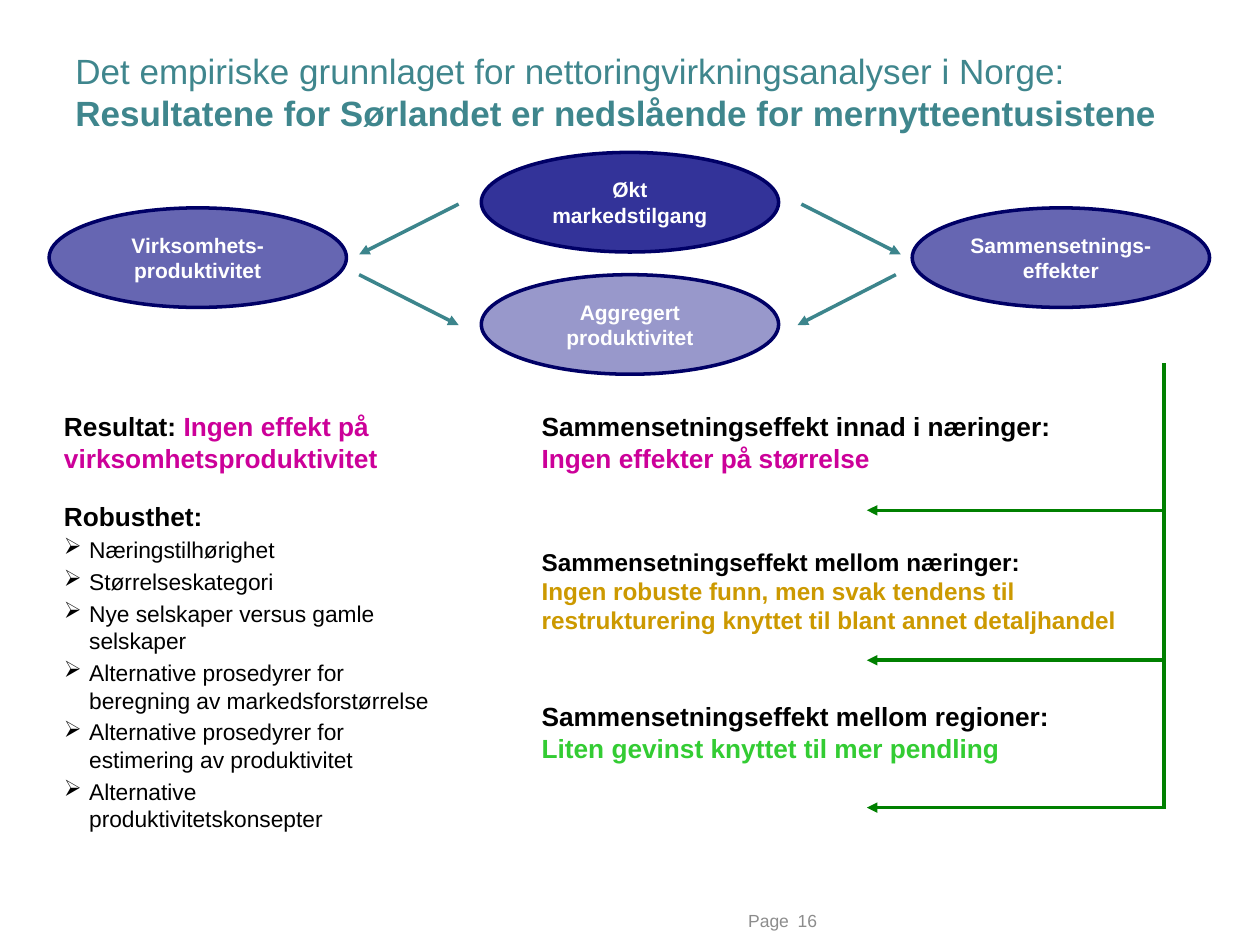
from typing import NamedTuple

from lxml.etree import SubElement
from pptx import Presentation
from pptx.dml.color import RGBColor
from pptx.enum.shapes import MSO_CONNECTOR, MSO_SHAPE
from pptx.enum.text import MSO_ANCHOR as Anchor, PP_ALIGN as Align
from pptx.oxml.ns import qn
from pptx.util import Inches, Pt

TITLE_TEAL = RGBColor(0x3F, 0x86, 0x8D)
ARROW_TEAL = RGBColor(0x3C, 0x85, 0x8C)
INDIGO = RGBColor(0x33, 0x33, 0x99)
NAVY = RGBColor(0x00, 0x00, 0x66)
BRANCH_GREEN = RGBColor(0x00, 0x80, 0x00)
MAGENTA = RGBColor(0xCC, 0x00, 0x99)
OCHRE = RGBColor(0xCC, 0x99, 0x00)
LIME = RGBColor(0x33, 0xCC, 0x33)
GREY = RGBColor(0x8C, 0x8C, 0x8C)
BLACK = RGBColor(0x00, 0x00, 0x00)
WHITE = RGBColor(0xFF, 0xFF, 0xFF)

OVAL_WIDTH, OVAL_HEIGHT = 2.36, 0.79
TRUNK_X, TRUNK_TOP, BRANCH_END_X = 9.24, 2.88, 6.88
FINDING_X = 4.2


class Concept(NamedTuple):
    label: str
    left: float
    top: float
    opacity: int


class Arrow(NamedTuple):
    x1: float
    y1: float
    x2: float
    y2: float


class Finding(NamedTuple):
    heading: str
    result: str
    color: RGBColor
    size: float
    top: float
    width: float
    height: float
    branch_y: float


CONCEPTS = [
    Concept("Økt markedstilgang", 3.82, 1.21, 100),
    Concept("Virksomhets-produktivitet", 0.39, 1.65, 75),
    Concept("Sammensetnings-effekter", 7.24, 1.65, 75),
    Concept("Aggregert produktivitet", 3.82, 2.18, 50),
]
ARROWS = [
    Arrow(3.64, 1.62, 2.85, 2.02),
    Arrow(6.36, 1.62, 7.15, 2.02),
    Arrow(7.11, 2.18, 6.33, 2.58),
    Arrow(2.85, 2.18, 3.64, 2.58),
]
FINDINGS = [
    Finding("Sammensetningseffekt innad i næringer:", "Ingen effekter på størrelse",
            MAGENTA, 15, 3.21, 4.25, 0.64, 4.05),
    Finding("Sammensetningseffekt mellom næringer:",
            "Ingen robuste funn, men svak tendens til restrukturering "
            "knyttet til blant annet detaljhandel",
            OCHRE, 13.9, 4.29, 4.88, 0.78, 5.24),
    Finding("Sammensetningseffekt mellom regioner:", "Liten gevinst knyttet til mer pendling",
            LIME, 15, 5.51, 4.25, 0.64, 6.41),
]
ROBUSTNESS_CHECKS = [
    "Næringstilhørighet",
    "Størrelseskategori",
    "Nye selskaper versus gamle selskaper",
    "Alternative prosedyrer for beregning av markedsforstørrelse",
    "Alternative prosedyrer for estimering av produktivitet",
    "Alternative produktivitetskonsepter",
]


def add_run(paragraph, text: str, size: float, color: RGBColor, bold: bool = False) -> None:
    run = paragraph.add_run()
    run.text = text
    run.font.name = "Arial"
    run.font.size = Pt(size)
    run.font.bold = bold
    run.font.color.rgb = color


def add_frame(slide, left: float, top: float, width: float, height: float,
              anchor: Anchor = Anchor.TOP):
    """Add a wrapping text box and return its text frame."""
    frame = slide.shapes.add_textbox(
        Inches(left), Inches(top), Inches(width), Inches(height)).text_frame
    frame.word_wrap = True
    frame.vertical_anchor = anchor
    return frame


def draw_line(slide, line: Arrow, color: RGBColor, arrowhead: bool = True) -> None:
    connector = slide.shapes.add_connector(
        MSO_CONNECTOR.STRAIGHT, Inches(line.x1), Inches(line.y1),
        Inches(line.x2), Inches(line.y2))
    connector.line.color.rgb = color
    connector.line.width = Pt(2)
    if arrowhead:
        SubElement(connector.line._get_or_add_ln(), qn("a:tailEnd"), type="triangle")
    SubElement(connector._element.spPr, qn("a:effectLst"))


def draw_concept(slide, concept: Concept) -> None:
    oval = slide.shapes.add_shape(
        MSO_SHAPE.OVAL, Inches(concept.left), Inches(concept.top),
        Inches(OVAL_WIDTH), Inches(OVAL_HEIGHT))
    oval.shadow.inherit = False
    oval.fill.solid()
    oval.fill.fore_color.rgb = INDIGO
    if concept.opacity < 100:
        fill_color = oval._element.spPr.find(qn("a:solidFill"))[0]
        SubElement(fill_color, qn("a:alpha"), val=str(concept.opacity * 1000))
    oval.line.color.rgb = NAVY
    oval.line.width = Pt(2)
    oval.text_frame.word_wrap = True
    oval.text_frame.vertical_anchor = Anchor.MIDDLE
    label = oval.text_frame.paragraphs[0]
    label.alignment = Align.CENTER
    add_run(label, concept.label, 12, WHITE, bold=True)


def draw_finding(slide, finding: Finding) -> None:
    frame = add_frame(slide, FINDING_X, finding.top, finding.width, finding.height)
    paragraph = frame.paragraphs[0]
    add_run(paragraph, finding.heading, finding.size, BLACK, bold=True)
    paragraph.add_line_break()
    add_run(paragraph, finding.result, finding.size, finding.color, bold=True)
    draw_line(slide, Arrow(TRUNK_X, finding.branch_y, BRANCH_END_X, finding.branch_y),
              BRANCH_GREEN)


def draw_title(slide) -> None:
    title = add_frame(slide, 0.5, 0.3, 9, 0.85, Anchor.MIDDLE).paragraphs[0]
    add_run(title, "Det empiriske grunnlaget for nettoringvirkningsanalyser i Norge:",
            20, TITLE_TEAL)
    title.add_line_break()
    add_run(title, "Resultatene for Sørlandet er nedslående for mernytteentusistene",
            20, TITLE_TEAL, bold=True)


def draw_firm_results(slide) -> None:
    frame = add_frame(slide, 0.41, 3.21, 3.14, 3.6)
    result = frame.paragraphs[0]
    add_run(result, "Resultat: ", 15, BLACK, bold=True)
    add_run(result, "Ingen effekt på virksomhetsproduktivitet", 15, MAGENTA, bold=True)
    robustness = frame.add_paragraph()
    robustness.space_before = Pt(15)
    add_run(robustness, "Robusthet:", 15, BLACK, bold=True)
    for check in ROBUSTNESS_CHECKS:
        item = frame.add_paragraph()
        item.space_before = Pt(2.6)
        properties = item._p.get_or_add_pPr()
        properties.set("marL", str(Inches(0.2)))
        properties.set("indent", str(-Inches(0.2)))
        SubElement(properties, qn("a:buChar"), char="➢")
        add_run(item, check, 13, BLACK)


def draw_page_number(slide) -> None:
    for text, left, width, alignment in [("Page", 5.87, 0.46, Align.CENTER),
                                         ("16", 6.33, 0.48, Align.LEFT)]:
        frame = add_frame(slide, left, 7.16, width, 0.29, Anchor.MIDDLE)
        frame.margin_left = frame.margin_right = frame.margin_top = frame.margin_bottom = 0
        frame.paragraphs[0].alignment = alignment
        add_run(frame.paragraphs[0], text, 10, GREY)


def main() -> None:
    deck = Presentation()
    deck.slide_width, deck.slide_height = Inches(10), Inches(7.5)
    slide = deck.slides.add_slide(deck.slide_layouts[6])
    draw_title(slide)
    for concept in CONCEPTS:
        draw_concept(slide, concept)
    for arrow in ARROWS:
        draw_line(slide, arrow, ARROW_TEAL)
    draw_firm_results(slide)
    segment_top = TRUNK_TOP
    for finding in FINDINGS:
        draw_finding(slide, finding)
        segment_bottom = finding.branch_y + 0.01
        draw_line(slide, Arrow(TRUNK_X, segment_bottom, TRUNK_X, segment_top),
                  BRANCH_GREEN, arrowhead=False)
        segment_top = segment_bottom
    draw_page_number(slide)
    deck.save("out.pptx")


if __name__ == "__main__":
    main()
